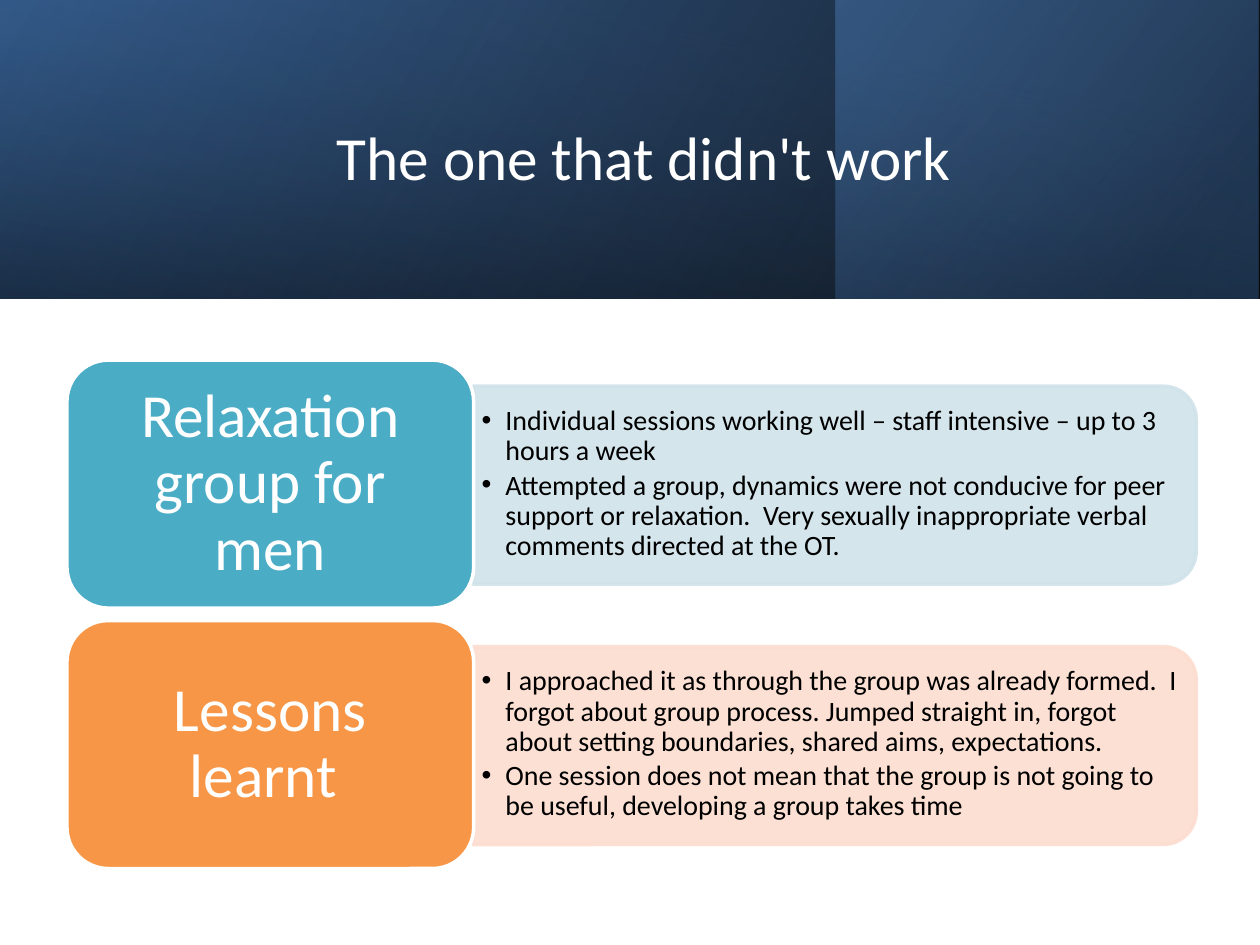
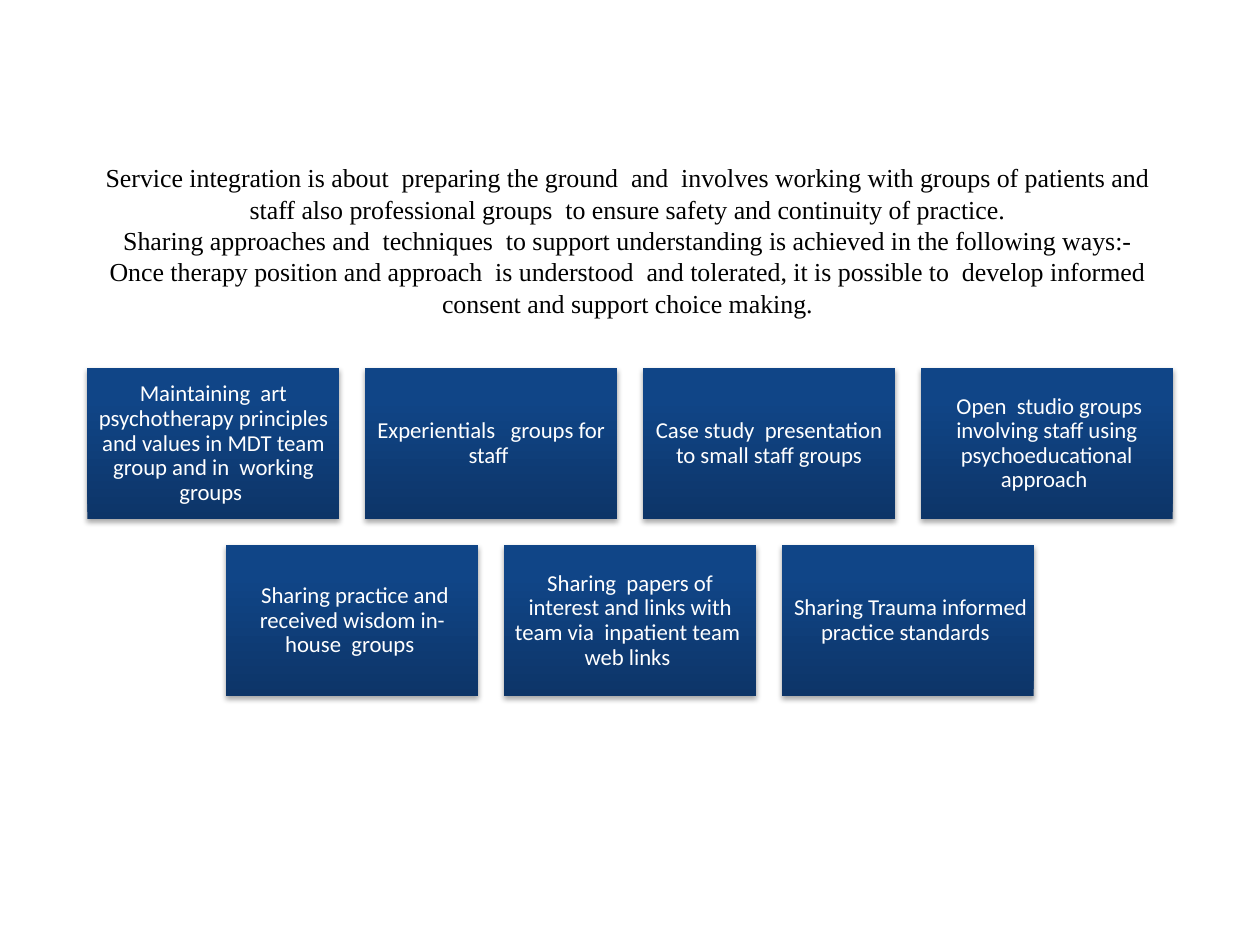
from dataclasses import dataclass

from lxml.etree import SubElement
from pptx import Presentation
from pptx.dml.color import RGBColor
from pptx.enum.shapes import MSO_SHAPE as SHAPE
from pptx.enum.text import MSO_ANCHOR as ANCHOR, PP_ALIGN as ALIGN
from pptx.oxml.ns import qn
from pptx.util import Cm, Pt


@dataclass(frozen=True)
class Theme:
    sans: str = "Calibri"
    serif: str = "Times New Roman"
    white: str = "FFFFFF"
    black: str = "000000"
    teal: str = "4BACC6"
    pale_teal: str = "D0E3EA"
    orange: str = "F79646"
    pale_orange: str = "FCDDCF"
    # gradient stops: position %, colour, opacity %
    band: tuple = ((0, "000000", 96), (100, "376092", 100))
    band_right: tuple = ((19, "254061", 68), (100, "4F81BD", 48))
    band_shade: tuple = ((23, "376092", 16), (99, "000000", 45))
    tile: tuple = ((0, "0D3568", 100), (80, "104587", 100), (100, "0E458A", 100))
    title_size: float = 35
    intro_size: float = 14.8
    bullet_size: float = 16
    tile_size: float = 13


T = Theme()


def add_block(slide, kind, box, fill, line=None, angle=0, opacity=100, shadow=False):
    """Add a shape; fill is a colour, or gradient stops running at angle (anticlockwise)."""
    sp = slide.shapes.add_shape(kind, *map(Cm, box))
    sp.shadow.inherit = False
    pr = sp._element.spPr
    if isinstance(fill, str):
        sp.fill.solid()
        sp.fill.fore_color.rgb = RGBColor.from_string(fill)
    else:
        sp.fill.gradient()
        sp.fill.gradient_angle = angle
        stops = pr.find(".//" + qn("a:gsLst"))
        stops.clear()
        for pos, color, alpha in fill:
            gs = SubElement(stops, qn("a:gs"), pos=str(pos * 1000))
            clr = SubElement(gs, qn("a:srgbClr"), val=color)
            SubElement(clr, qn("a:alpha"), val=str(alpha * 1000))
    if line:
        sp.line.color.rgb = RGBColor.from_string(line)
        sp.line.width = Pt(2)
    else:
        sp.line.fill.background()
    if opacity < 100:
        for clr in pr.iter(qn("a:srgbClr")):
            SubElement(clr, qn("a:alpha"), val=str(opacity * 1000))
    if shadow:
        shd = SubElement(pr.find(qn("a:effectLst")), qn("a:outerShdw"), blurRad=str(Pt(3.1)),
                         dist=str(Pt(1.8)), dir="5400000", rotWithShape="0")
        clr = SubElement(shd, qn("a:srgbClr"), val=T.black)
        SubElement(clr, qn("a:alpha"), val="35000")
    return sp


def write(sp, *paragraphs, size, color=T.white, font=T.sans, align=ALIGN.CENTER,
          spacing=0.9, after=0, bullet=False, insets=(0.25, 0.13, 0.25, 0.13)):
    tf = sp.text_frame
    tf.word_wrap = True
    tf.vertical_anchor = ANCHOR.MIDDLE
    tf.margin_left, tf.margin_top, tf.margin_right, tf.margin_bottom = map(Cm, insets)
    for i, text in enumerate(paragraphs):
        p = tf.paragraphs[0] if i == 0 else tf.add_paragraph()
        p.alignment = align
        p.line_spacing = spacing
        p.space_after = Pt(after)
        if bullet:
            pPr = p._p.get_or_add_pPr()
            pPr.set("marL", str(Cm(0.48)))
            pPr.set("indent", str(-Cm(0.48)))
            SubElement(pPr, qn("a:buFont"), typeface="Arial")
            SubElement(pPr, qn("a:buChar"), char="•")
        r = p.add_run()
        r.text = text
        r.font.size = Pt(size)
        r.font.name = font
        r.font.color.rgb = RGBColor.from_string(color)


prs = Presentation()
prs.slide_width, prs.slide_height = Cm(25.4), Cm(19.05)
blank = prs.slide_layouts[6]

# Slide 1: title band and two labelled panels
s = prs.slides.add_slide(blank)
add_block(s, SHAPE.RECTANGLE, (0, 0, 25.4, 6.02), T.band, angle=150)
add_block(s, SHAPE.RECTANGLE, (16.84, 0, 8.53, 6.02), T.band_right, angle=140)
add_block(s, SHAPE.RECTANGLE, (0, 0, 25.38, 6.02), T.band_shade, angle=260)
title = s.shapes.add_textbox(Cm(2.87), Cm(0.97), Cm(20.24), Cm(4.37))
write(title, "The one that didn't work", size=T.title_size, spacing=1.0)

topics = [
    ("Relaxation group for men", T.teal, T.pale_teal, [
        "Individual sessions working well – staff intensive – up to 3 hours a week",
        "Attempted a group, dynamics were not conducive for peer support or relaxation.  "
        "Very sexually inappropriate verbal comments directed at the OT."]),
    ("Lessons learnt ", T.orange, T.pale_orange, [
        "I approached it as through the group was already formed.  I forgot about group "
        "process. Jumped straight in, forgot about setting boundaries, shared aims, "
        "expectations.",
        "One session does not mean that the group is not going to be useful, developing "
        "a group takes time"]),
]
for i, (label, strong, pale, points) in enumerate(topics):
    dy = i * 5.25
    panel = add_block(s, SHAPE.ROUND_2_SAME_RECTANGLE, (14.83, 2.49 + dy, 3.99, 14.58),
                      pale, line=pale, opacity=90)
    panel.rotation = 90
    body = s.shapes.add_textbox(Cm(9.53), Cm(7.95 + dy), Cm(14.38), Cm(3.61))
    write(body, *points, size=T.bullet_size, color=T.black, align=ALIGN.LEFT, after=2.4,
          bullet=True, insets=(0.18, 0.08, 0.16, 0.08))
    tab = add_block(s, SHAPE.ROUNDED_RECTANGLE, (1.35, 7.26 + dy, 8.2, 5), strong,
                    line=T.white)
    write(tab, label, size=T.title_size, insets=(0.4, 0.18, 0.4, 0.18))

# Slide 2: introduction and centred rows of tiles
s = prs.slides.add_slide(blank)
intro = s.shapes.add_textbox(Cm(1.65), Cm(3.15), Cm(22), Cm(3.38))
write(intro,
      "Service integration is about  preparing the ground  and  involves working with groups "
      "of patients and staff also professional groups  to ensure safety and continuity of "
      "practice.",
      "Sharing approaches and  techniques  to support understanding is achieved in the "
      "following ways:- Once therapy position and approach  is understood  and tolerated, it "
      "is possible to  develop informed consent and support choice making.",
      size=T.intro_size, color=T.black, font=T.serif, spacing=Pt(17.9))

tile_w, tile_h, gap = 5.08, 3.05, 0.52
rows = [
    ["Maintaining  art psychotherapy principles and values in MDT team group and in  "
     "working groups ",
     "Experientials   groups for staff ",
     "Case study  presentation to small staff groups",
     " Open  studio groups involving staff using psychoeducational approach "],
    [" Sharing practice and received wisdom in-house  groups ",
     "Sharing  papers of interest and links with team via  inpatient team  web links ",
     " Sharing Trauma informed practice standards "],
]
for i, row in enumerate(rows):
    left = (25.4 - len(row) * (tile_w + gap) + gap) / 2
    for j, text in enumerate(row):
        box = (left + j * (tile_w + gap), 7.42 + i * (tile_h + gap), tile_w, tile_h)
        tile = add_block(s, SHAPE.RECTANGLE, box, T.tile, angle=90, shadow=True)
        write(tile, text, size=T.tile_size, insets=(0.13,) * 4)

prs.save("out.pptx")
